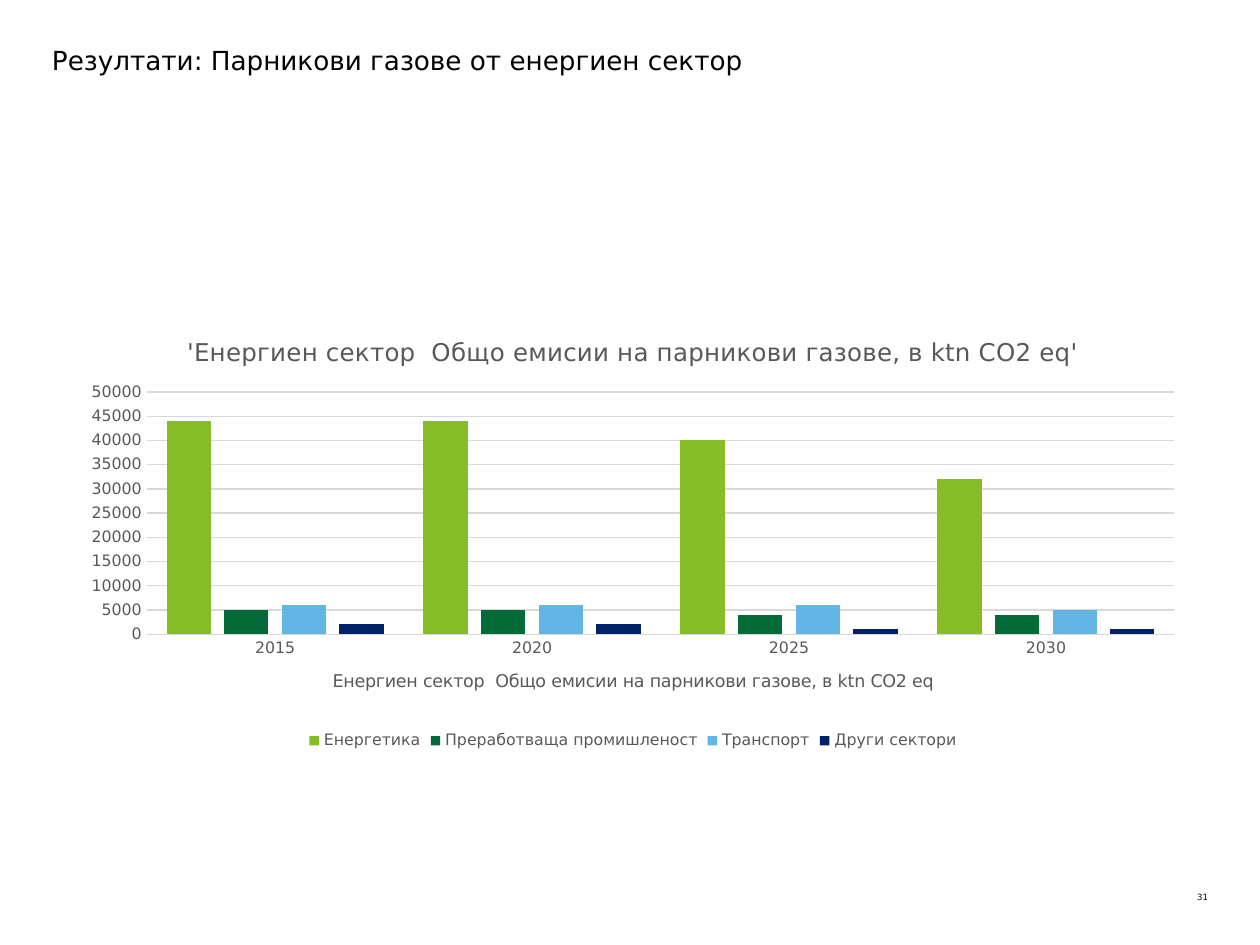
"""Build a slide with a column chart of greenhouse gas emissions by energy sector."""
from pptx import Presentation
from pptx.chart.data import CategoryChartData
from pptx.dml.color import RGBColor
from pptx.enum.chart import XL_CHART_TYPE as ChartType, XL_LEGEND_POSITION as LegendPosition
from pptx.enum.chart import XL_TICK_MARK as TickMark
from pptx.enum.text import PP_ALIGN as Align
from pptx.util import Emu, Pt

FONT = "DejaVu Sans"
SCALE = 914400 / 126
COLORS = {
    "text": "000000", "label": "595959", "grid": "D9D9D9",
    "Енергетика": "86BC25", "Преработваща промишленост": "046A38",
    "Транспорт": "62B5E5", "Други сектори": "012169",
}
EMISSIONS = {
    "Енергетика": (44000, 44000, 40000, 32000),
    "Преработваща промишленост": (5000, 5000, 4000, 4000),
    "Транспорт": (6000, 6000, 6000, 5000),
    "Други сектори": (2000, 2000, 1000, 1000),
}
SUBJECT = "Енергиен сектор  Общо емисии на парникови газове, в ktn CO2 eq"


def px(*lengths):
    return [Emu(round(length * SCALE)) for length in lengths]


def style(font, size, color):
    font.name = FONT
    font.size = Pt(size)
    font.bold = False
    font.color.rgb = RGBColor.from_string(COLORS[color])


deck = Presentation()
deck.slide_width, deck.slide_height = px(1260, 945)
page = deck.slides.add_slide(deck.slide_layouts[6])

for text, place, size, align in (
    ("Резултати: Парникови газове от енергиен сектор", (52, 44, 1157, 96), 15, Align.LEFT),
    ("31", (1177, 892, 31, 14), 4.9, Align.RIGHT),
):
    frame = page.shapes.add_textbox(*px(*place)).text_frame
    frame.word_wrap = True
    frame.margin_left = frame.margin_top = frame.margin_right = frame.margin_bottom = 0
    frame.text = text
    para = frame.paragraphs[0]
    para.alignment = align
    style(para.runs[0].font, size, "text")

data = CategoryChartData()
data.categories = ["2015", "2020", "2025", "2030"]
for sector, values in EMISSIONS.items():
    data.add_series(sector, values)
chart = page.shapes.add_chart(
    ChartType.COLUMN_CLUSTERED, *px(69, 315, 1128, 440), data
).chart
style(chart.font, 10, "text")

years, amounts = chart.category_axis, chart.value_axis
for owner, text, size in ((chart, f"'{SUBJECT}'", 14), (years, SUBJECT, 10)):
    title = (owner.chart_title if owner is chart else owner.axis_title).text_frame
    title.text = text
    style(title.paragraphs[0].runs[0].font, size, "label")
chart.chart_title.include_in_layout = False

for axis in (years, amounts):
    axis.major_tick_mark = axis.minor_tick_mark = TickMark.NONE
    style(axis.tick_labels.font, 9, "label")
amounts.minimum_scale, amounts.maximum_scale, amounts.major_unit = 0, 50000, 5000
amounts.has_major_gridlines = True
amounts.format.line.fill.background()
for line in (years.format.line, amounts.major_gridlines.format.line):
    line.color.rgb = RGBColor.from_string(COLORS["grid"])
    line.width = Pt(0.75)

chart.has_legend = True
chart.legend.position = LegendPosition.BOTTOM
chart.legend.include_in_layout = False
style(chart.legend.font, 9, "label")

plot = chart.plots[0]
plot.vary_by_categories = False
plot.gap_width, plot.overlap = 90, -30
for series in plot.series:
    series.format.fill.solid()
    series.format.fill.fore_color.rgb = RGBColor.from_string(COLORS[series.name])

deck.save("out.pptx")
